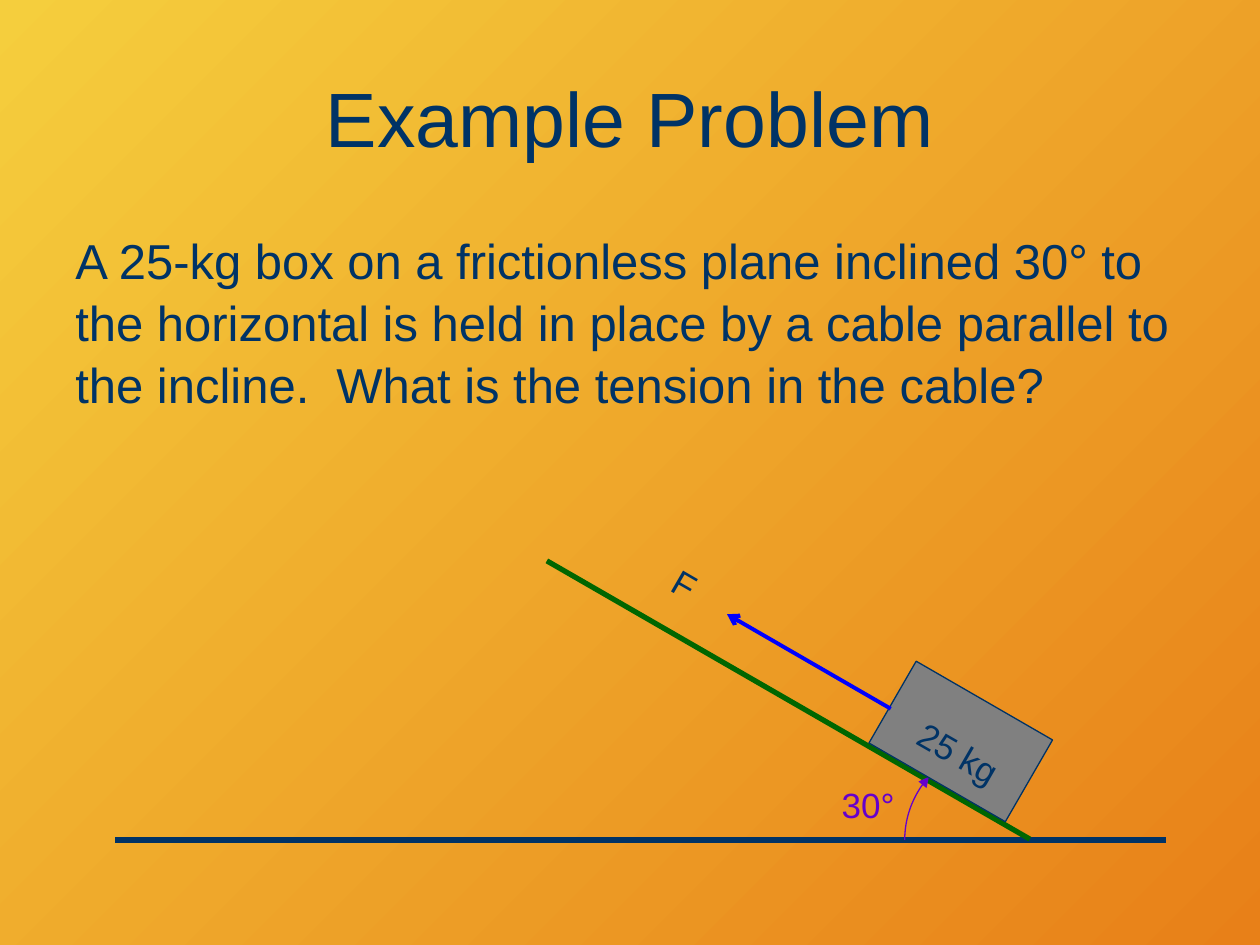
import lxml.etree
import pptx
import pptx.dml.color
import pptx.enum.shapes
import pptx.enum.text
import pptx.oxml.ns
import pptx.util

Pt = pptx.util.Pt
RGBColor = pptx.dml.color.RGBColor
Shape = pptx.enum.shapes.MSO_SHAPE
Align = pptx.enum.text.PP_ALIGN
Anchor = pptx.enum.text.MSO_ANCHOR
AutoSize = pptx.enum.text.MSO_AUTO_SIZE
qn = pptx.oxml.ns.qn

YELLOW = RGBColor(0xF5, 0xCE, 0x3D)
ORANGE = RGBColor(0xE8, 0x80, 0x18)
NAVY = RGBColor(0x00, 0x33, 0x66)
GREEN = RGBColor(0x00, 0x66, 0x00)
PURPLE = RGBColor(0x66, 0x00, 0xCC)
BLUE = RGBColor(0x00, 0x00, 0xFF)
GRAY = RGBColor(0x80, 0x80, 0x80)
INCLINE = 30


def apply(target, values):
    for name, value in values.items():
        setattr(target, name, value)


class SlideBuilder:
    font_name = "Arial"

    def __init__(self, slide):
        self.slide = slide

    def background(self, start, end, angle):
        fill = self.slide.background.fill
        fill.gradient()
        fill.gradient_angle = angle
        for stop, color in zip(fill.gradient_stops, (start, end)):
            stop.color.rgb = color

    def outline(self, shape, color, width, arrow=None):
        shape.line.color.rgb = color
        shape.line.width = Pt(width)
        if arrow:
            line = shape.line._get_or_add_ln()
            lxml.etree.SubElement(line, qn("a:tailEnd"), type=arrow)

    def text(self, words, box, size, color=NAVY, rotation=0, frame=None, paragraph=None):
        shape = self.slide.shapes.add_textbox(*map(Pt, box))
        shape.rotation = rotation
        apply(shape.text_frame, frame or {"word_wrap": False, "auto_size": AutoSize.SHAPE_TO_FIT_TEXT})
        first = shape.text_frame.paragraphs[0]
        apply(first, paragraph or {})
        run = first.add_run()
        run.text = words
        apply(run.font, {"name": self.font_name, "size": Pt(size)})
        run.font.color.rgb = color

    def line(self, start, end, color, width, arrow=None):
        connector = self.slide.shapes.add_connector(
            pptx.enum.shapes.MSO_CONNECTOR.STRAIGHT, *map(Pt, start + end))
        self.outline(connector, color, width, arrow)
        lxml.etree.SubElement(connector._element.spPr, qn("a:effectLst"))

    def rectangle(self, box, fill, color, width, rotation=0):
        shape = self.slide.shapes.add_shape(Shape.RECTANGLE, *map(Pt, box))
        shape.rotation = rotation
        shape.shadow.inherit = False
        shape.fill.solid()
        shape.fill.fore_color.rgb = fill
        self.outline(shape, color, width)

    def arc(self, center, radius, angles, color, width, arrow):
        box = (center[0] - radius, center[1] - radius, 2 * radius, 2 * radius)
        shape = self.slide.shapes.add_shape(Shape.ARC, *map(Pt, box))
        shape.shadow.inherit = False
        shape.fill.background()
        for index, angle in enumerate(angles):
            shape.adjustments[index] = angle * 0.6
        self.outline(shape, color, width, arrow)


def main():
    presentation = pptx.Presentation()
    apply(presentation, {"slide_width": Pt(720), "slide_height": Pt(540)})
    slide = presentation.slides.add_slide(presentation.slide_layouts[6])
    builder = SlideBuilder(slide)

    builder.background(YELLOW, ORANGE, 315)
    builder.text("Example Problem", (36, 21.6, 648, 90), 44,
                 frame={"word_wrap": True, "vertical_anchor": Anchor.MIDDLE},
                 paragraph={"alignment": Align.CENTER})
    builder.text("A 25-kg box on a frictionless plane inclined 30° to the horizontal is held "
                 "in place by a cable parallel to the incline.  What is the tension in the cable?",
                 (36, 126.5, 648, 180), 28,
                 frame={"word_wrap": True}, paragraph={"line_spacing": 1.05})

    builder.line((66, 480), (666, 480), NAVY, 3)
    builder.line((312.5, 320.5), (588.5, 479.5), GREEN, 3)
    builder.arc((571, 480), 54, (180, 222), PURPLE, 0.75, "triangle")
    builder.text("30°", (473.8, 444.2, 44.6, 31), 20, PURPLE)
    builder.rectangle((504, 396.7, 90, 54), GRAY, NAVY, 0.75, INCLINE)
    builder.text("25 kg", (516.2, 414.7, 63.4, 31), 20, rotation=INCLINE)
    builder.line((509, 405), (415.5, 351), BLUE, 2.25, "arrow")
    builder.text("F", (378, 318.2, 27.4, 31.7), 20, rotation=INCLINE)

    presentation.save("out.pptx")


if __name__ == "__main__":
    main()
